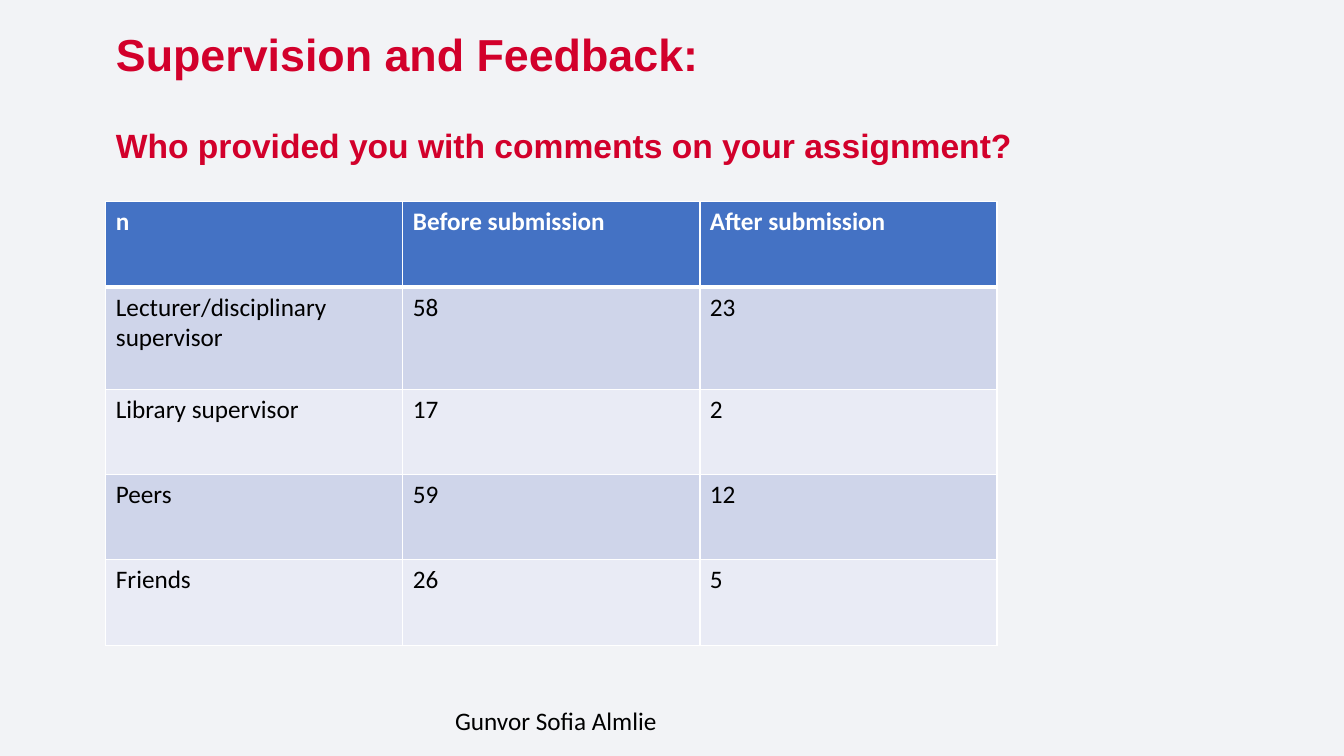
from lxml import etree
from pptx import Presentation
from pptx import util as u
from pptx.dml.color import RGBColor
from pptx.enum import text
from pptx.oxml import ns

RED = RGBColor(0xD2, 0x00, 0x2B)
BLUE = RGBColor(0x44, 0x72, 0xC4)
DARK = RGBColor(0xCF, 0xD5, 0xEA)
LIGHT = RGBColor(0xE9, 0xEB, 0xF5)
WHITE = RGBColor(0xFF, 0xFF, 0xFF)
BLACK = RGBColor(0x00, 0x00, 0x00)
PAPER = RGBColor(0xF2, 0xF3, 0xF6)

LEFT = 75.6
HEADING = [("Supervision and Feedback:", 32, 0),
           ("Who provided you with comments on your assignment?", 24, 35)]
COMMENTS = [("n", "Before submission", "After submission"),
            ("Lecturer/disciplinary supervisor", "58", "23"),
            ("Library supervisor", "17", "2"),
            ("Peers", "59", "12"),
            ("Friends", "26", "5")]
HEIGHTS = [61, 73, 61, 61, 61]


class Deck:
    """Holds the text styles and the current slide, and adds elements to it."""

    head = {"name": "Arial", "bold": True}
    body = {"name": "Calibri", "size": u.Pt(18), "bold": False}

    def __init__(self, width, height):
        self.show = Presentation()
        self.show.slide_width, self.show.slide_height = u.Pt(width), u.Pt(height)
        self.slide = self.show.slides.add_slide(self.show.slide_layouts[5])
        self.slide.background.fill.solid()
        self.slide.background.fill.fore_color.rgb = PAPER

    def style(self, font, color, **values):
        for key, value in values.items():
            setattr(font, key, value)
        font.color.rgb = color

    def title(self, lines, left, top, width, height):
        box = self.slide.shapes.title
        box.left, box.top, box.width, box.height = map(u.Pt, (left, top, width, height))
        frame = box.text_frame
        frame.text = "\n".join(line for line, _, _ in lines)
        form = {"word_wrap": True, "auto_size": text.MSO_AUTO_SIZE.NONE,
                "vertical_anchor": text.MSO_ANCHOR.MIDDLE}
        for key, value in form.items():
            setattr(frame, key, value)
        for para, (_, size, gap) in zip(frame.paragraphs, lines):
            form = {"alignment": text.PP_ALIGN.LEFT, "line_spacing": 0.9,
                    "space_before": u.Pt(gap)}
            for key, value in form.items():
                setattr(para, key, value)
            self.style(para.runs[0].font, RED, size=u.Pt(size), **self.head)

    def label(self, words, left, top, width, height):
        box = self.slide.shapes.add_textbox(*map(u.Pt, (left, top, width, height)))
        box.text_frame.word_wrap = True
        box.text_frame.text = words
        self.style(box.text_frame.paragraphs[0].runs[0].font, BLACK, **self.body)

    def border(self, cell, **widths):
        props = cell._tc.get_or_add_tcPr()
        for spot, (side, width) in enumerate(widths.items()):
            line = etree.Element(ns.qn("a:ln" + side), w=str(u.Pt(width)))
            fill = etree.SubElement(line, ns.qn("a:solidFill"))
            etree.SubElement(fill, ns.qn("a:srgbClr"), val=str(WHITE))
            props.insert(spot, line)

    def table(self, rows, heights, left, top, width):
        area = map(u.Pt, (left, top, width, sum(heights)))
        grid = self.slide.shapes.add_table(len(rows), len(rows[0]), *area).table
        for at, (row, height) in enumerate(zip(rows, heights)):
            grid.rows[at].height = u.Pt(height)
            fill = BLUE if at == 0 else DARK if at % 2 else LIGHT
            for col, words in enumerate(row):
                cell = grid.cell(at, col)
                cell.text = words
                cell.fill.solid()
                cell.fill.fore_color.rgb = fill
                form = {**self.body, "bold": at == 0}
                self.style(cell.text_frame.paragraphs[0].runs[0].font,
                           BLACK if at else WHITE, **form)
                self.border(cell, L=1, R=1, T=3 if at == 1 else 1, B=1 if at else 3)


def main():
    deck = Deck(960, 540)
    deck.title(HEADING, LEFT, 18.7, 818.6, 104.4)
    deck.table(COMMENTS, HEIGHTS, LEFT, 144, 636.6)
    deck.label("Gunvor Sofia Almlie", 318, 500.4, 576, 29)
    deck.show.save("out.pptx")


if __name__ == "__main__":
    main()
